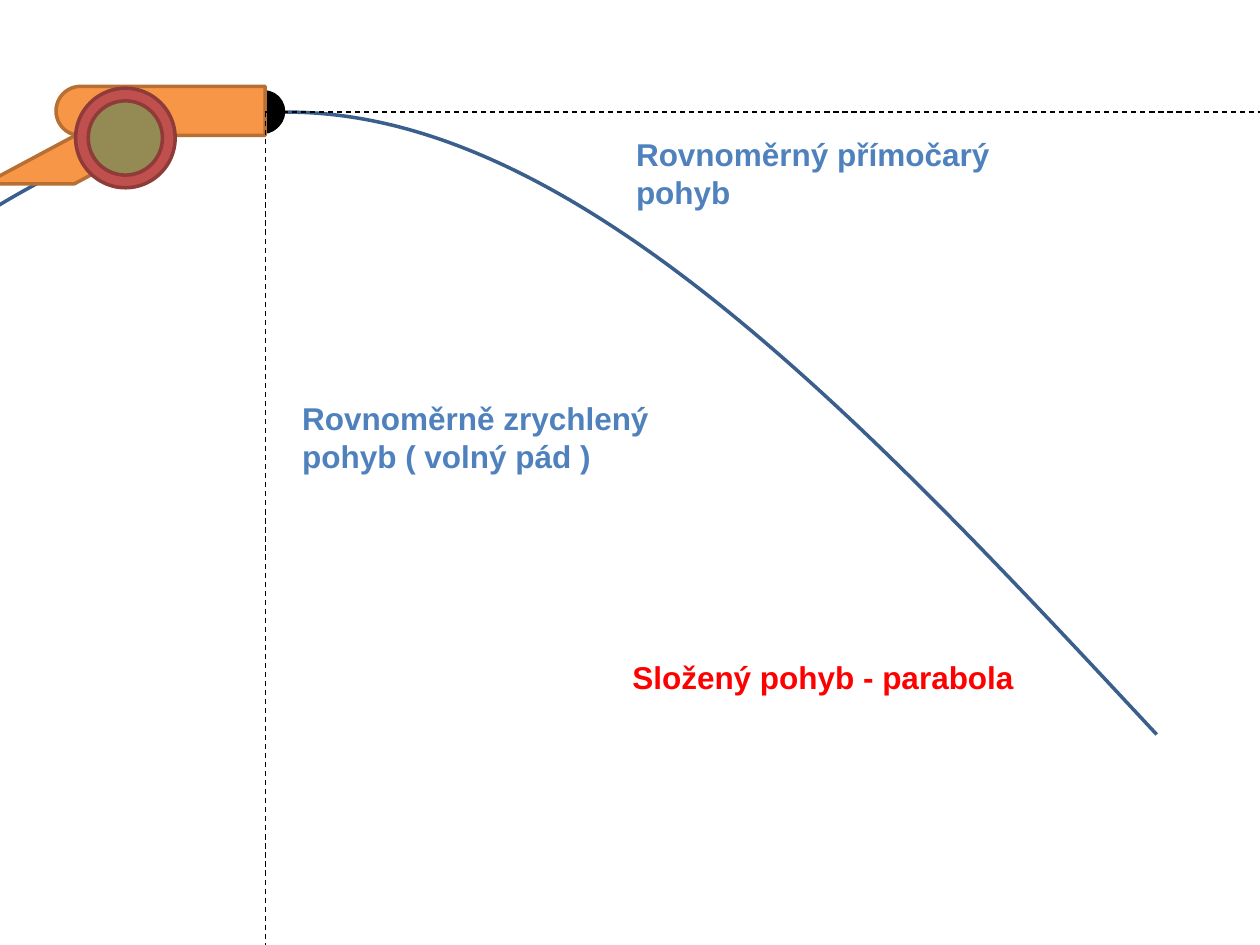
import pptx
import pptx.dml.color
import pptx.enum.dml
import pptx.enum.shapes
import pptx.enum.text
import pptx.oxml
import pptx.oxml.ns
import pptx.util

Inches = pptx.util.Inches
SHAPE = pptx.enum.shapes.MSO_SHAPE

THEME = {
    "font": "Arial", "text size": 18, "outline": 2, "axis width": 0.75,
    "blue": "4F81BD", "dark blue": "3A5F8C", "red": "FF0000", "black": "000000",
    "orange": "F79646", "dark orange": "B76F34", "olive": "948A54",
    "brick": "C0504D", "dark brick": "8E3B39",
}

# Start point, then two control points and an end point for each Bézier arc
TRAJECTORY = [(-4.61, 5.85),
              (-2.31, 3.38), (-0.01, 0.9), (2.28, 0.89),
              (4.58, 0.89), (6.88, 3.36), (9.18, 5.83)]

BALL_SIZE = 0.31
BALL_POSITIONS = [(1.93, 0.73), (1.93, 0.74), (1.94, 0.73)]

# preset, (left, top, width, height), fill, outline, rotation, flipped, adjustments
CANNON = [
    (SHAPE.DIAGONAL_STRIPE, (-0.12, 0.7, 1.42, 0.76), "orange", "dark orange", 0, True, []),
    (SHAPE.ROUND_2_SAME_RECTANGLE, (1.08, 0.05, 0.39, 1.66), "orange", "dark orange", 270, False, [0.5, 0]),
    (SHAPE.OVAL, (0.65, 0.72, 0.71, 0.71), "olive", "dark blue", 0, False, []),
    (SHAPE.DONUT, (0.6, 0.7, 0.79, 0.79), "brick", "dark brick", 0, False, [0.127]),
]

LABELS = [
    ("Složený pohyb - parabola", (4.92, 5.17, 3.39, 0.4), "red"),
    ("Rovnoměrný přímočarý pohyb", (4.95, 1.02, 3.7, 0.71), "blue"),
    ("Rovnoměrně zrychlený pohyb ( volný pád )", (2.3, 3.12, 3.39, 0.71), "blue"),
]

AXES = [((2.1, 0.89), (10.16, 0.89)), ((2.11, 0.89), (2.11, 7.85))]


def color(name):
    return pptx.dml.color.RGBColor.from_string(THEME[name])


def set_line(line, name, width):
    line.color.rgb = color(name)
    line.width = pptx.util.Pt(width)


def add_trajectory(shapes):
    """Draw the points as a freeform, then turn each three segments into one Bézier arc."""
    points = [(Inches(x), Inches(y)) for x, y in TRAJECTORY]
    builder = shapes.build_freeform(*points[0])
    builder.add_line_segments(points[1:], close=False)
    trajectory = builder.convert_to_shape()
    trajectory.shadow.inherit = False
    trajectory.fill.background()
    set_line(trajectory.line, "dark blue", THEME["outline"])

    segments = trajectory._element.findall(".//" + pptx.oxml.ns.qn("a:lnTo"))
    for first in range(0, len(segments), 3):
        arc = pptx.oxml.parse_xml(f"<a:cubicBezTo {pptx.oxml.ns.nsdecls('a')}/>")
        segments[first].addprevious(arc)
        for segment in segments[first:first + 3]:
            arc.append(segment[0])
            segment.getparent().remove(segment)


def add_part(shapes, preset, box, fill, outline, rotation=0, flipped=False, adjustments=()):
    part = shapes.add_shape(preset, *map(Inches, box))
    part.shadow.inherit = False
    part.fill.solid()
    part.fill.fore_color.rgb = color(fill)
    set_line(part.line, outline, THEME["outline"])
    part.rotation = rotation
    for index, value in enumerate(adjustments):
        part.adjustments[index] = value
    if flipped:
        xfrm = part._element.spPr.get_or_add_xfrm()
        xfrm.set("flipH", "1")
        xfrm.set("flipV", "1")


def add_label(shapes, wording, box, color_name):
    frame = shapes.add_textbox(*map(Inches, box)).text_frame
    frame.word_wrap = True
    frame.auto_size = pptx.enum.text.MSO_AUTO_SIZE.SHAPE_TO_FIT_TEXT
    frame.text = wording
    font = frame.paragraphs[0].runs[0].font
    font.name = THEME["font"]
    font.size = pptx.util.Pt(THEME["text size"])
    font.bold = True
    font.color.rgb = color(color_name)


def add_axis(shapes, start, end):
    axis = shapes.add_connector(pptx.enum.shapes.MSO_CONNECTOR.STRAIGHT,
                                *map(Inches, start + end))
    set_line(axis.line, "black", THEME["axis width"])
    axis.line.dash_style = pptx.enum.dml.MSO_LINE.DASH
    axis._element.spPr.append(
        pptx.oxml.parse_xml(f"<a:effectLst {pptx.oxml.ns.nsdecls('a')}/>"))


def main():
    presentation = pptx.Presentation()
    presentation.slide_width = Inches(10)
    presentation.slide_height = Inches(7.5)
    shapes = presentation.slides.add_slide(presentation.slide_layouts[6]).shapes

    add_trajectory(shapes)
    for left, top in BALL_POSITIONS:
        add_part(shapes, SHAPE.OVAL, (left, top, BALL_SIZE, BALL_SIZE), "black", "black")
    for part in CANNON:
        add_part(shapes, *part)
    for label in LABELS:
        add_label(shapes, *label)
    for axis in AXES:
        add_axis(shapes, *axis)

    presentation.save("out.pptx")


if __name__ == "__main__":
    main()
